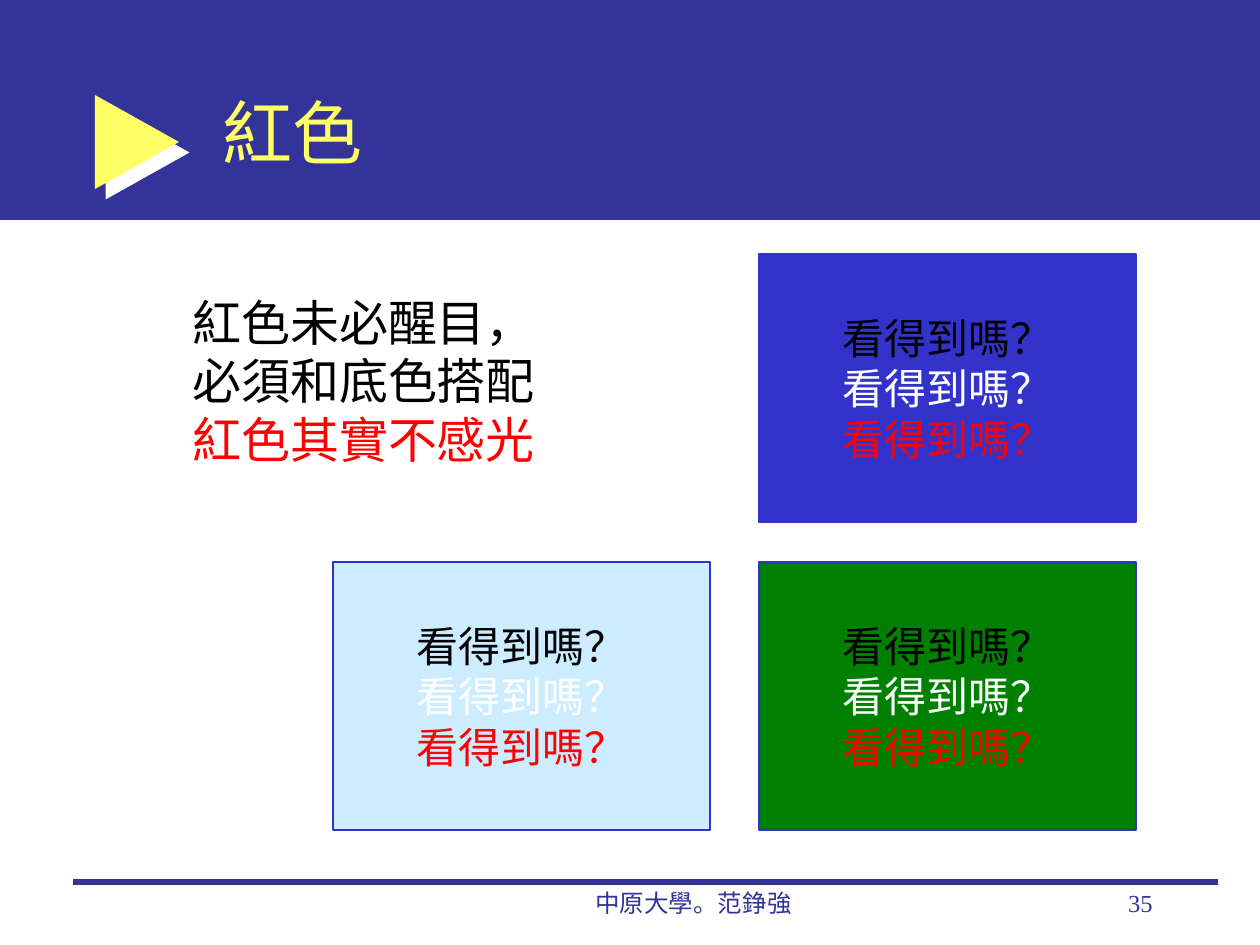
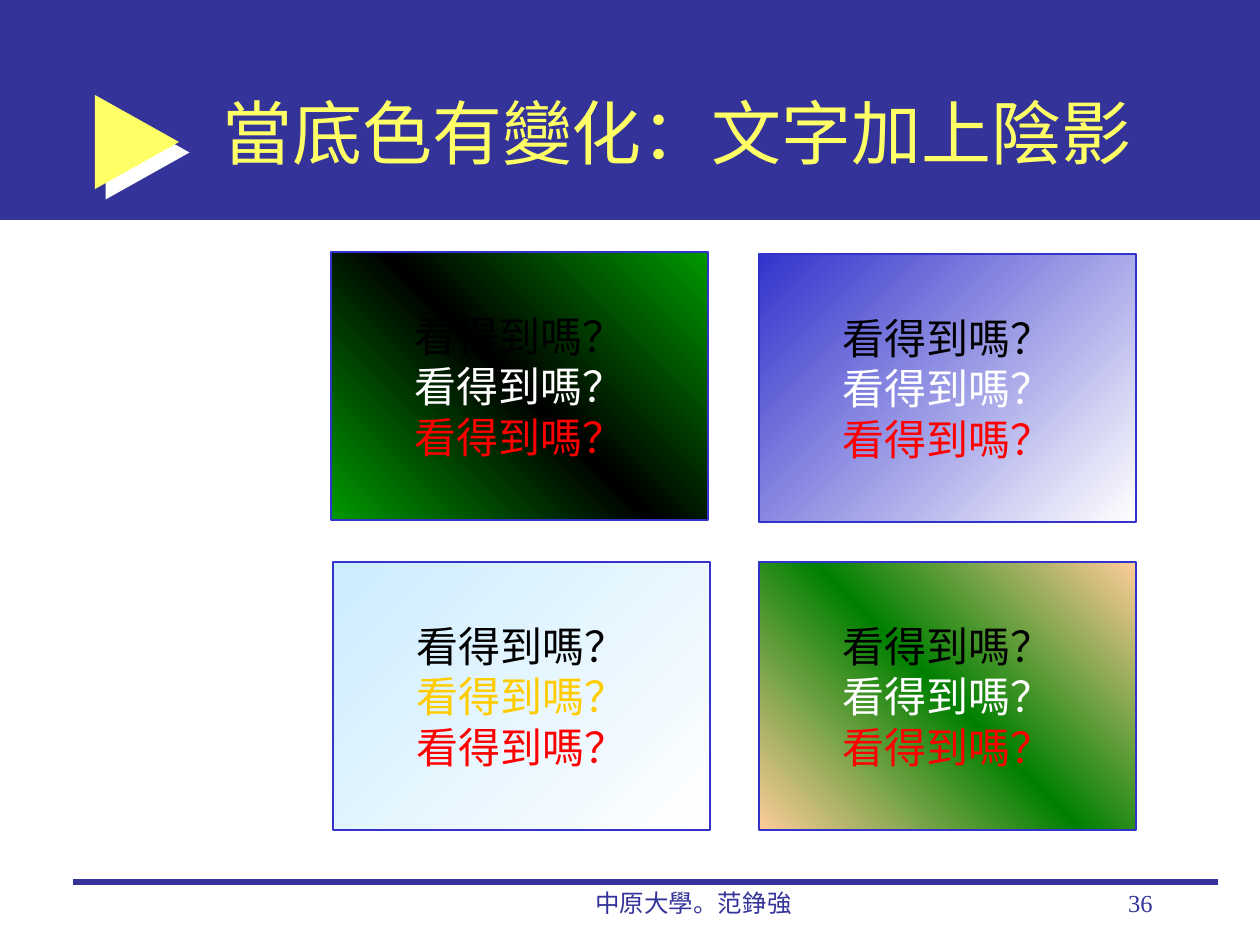
from dataclasses import dataclass
from lxml import etree
from pptx import Presentation
from pptx import util as u
from pptx.dml.color import RGBColor
from pptx.enum import shapes, text
from pptx.oxml.ns import qn

SCALE = 914400 / 126  # EMU in one px


def px(length):
    return u.Emu(round(length * SCALE))


@dataclass(frozen=True)
class Theme:
    navy: str = "333399"
    yellow: str = "FFFF66"
    white: str = "FFFFFF"
    black: str = "000000"
    red: str = "FF0000"
    gold: str = "FFCC00"
    blue: str = "3333CC"
    sky: str = "CCECFF"
    green: str = "008000"
    leaf: str = "009900"
    peach: str = "FFCC99"
    title_font: str = "Arial"
    body_font: str = "Times New Roman"
    title_size: int = 40
    note_size: int = 28
    sample_size: int = 24
    footer_size: int = 14


THEME = Theme()
FOOTER = "中原大學。范錚強"
QUESTION = "看得到嗎？"

# Panel grid
PANEL_W, PANEL_H = 377, 268
COLUMNS, ROWS = (333, 759), (254, 562)


class Painter:
    def __init__(self, deck, theme):
        self.deck, self.theme = deck, theme
        self.page = None

    def new_page(self, title, number):
        theme = self.theme
        self.page = self.deck.slides.add_slide(self.deck.slide_layouts[6])
        # Title band with its arrow
        self.shape(shapes.MSO_SHAPE.RECTANGLE, (0, 0, 1260, 220), theme.navy)
        arrow = self.shape(shapes.MSO_SHAPE.RIGHT_ARROW, (95, 95, 84, 94), theme.yellow)
        arrow.adjustments[0], arrow.adjustments[1] = 0.384, 1
        self.cast_shadow(arrow, theme.white)
        self.label((210, 53, 955, 157), [(title, theme.yellow)], theme.title_size,
                   theme.title_font, vertical_anchor=text.MSO_ANCHOR.MIDDLE)
        # Footer
        self.rule((73, 882), (1218, 882), theme.navy, 3)
        for frame, words, align in (
                ((494, 882, 399, 63), FOOTER, text.PP_ALIGN.CENTER),
                ((903, 882, 262, 63), str(number), text.PP_ALIGN.RIGHT)):
            self.label(frame, [(words, theme.navy)], theme.footer_size, align=align)

    def shape(self, kind, frame, fill, line=None):
        shape = self.page.shapes.add_shape(kind, *map(px, frame))
        shape.shadow.inherit = False
        if isinstance(fill, str):
            shape.fill.solid()
            shape.fill.fore_color.rgb = RGBColor.from_string(fill)
        else:
            self.gradient(shape, *fill)
        if line:
            shape.line.color.rgb = RGBColor.from_string(line)
            shape.line.width = u.Pt(0.75)
        else:
            shape.line.fill.background()
        return shape

    def gradient(self, shape, angle, colours):
        shape.fill.gradient()
        shape.fill.gradient_angle = angle
        stops = shape._element.spPr.find(".//" + qn("a:gsLst"))
        for stop in list(stops):
            stops.remove(stop)
        for i, colour in enumerate(colours):
            position = 100000 * i // (len(colours) - 1)
            stop = etree.SubElement(stops, qn("a:gs"), pos=str(position))
            etree.SubElement(stop, qn("a:srgbClr"), val=colour)

    def cast_shadow(self, shape, colour):
        effects = shape._element.spPr.find(qn("a:effectLst"))
        shadow = etree.SubElement(effects, qn("a:outerShdw"), dist=str(int(u.Pt(8.5))),
                                  dir="2700000", algn="ctr", rotWithShape="0")
        etree.SubElement(shadow, qn("a:srgbClr"), val=colour)

    def rule(self, start, end, colour, width):
        line = self.page.shapes.add_connector(
            shapes.MSO_CONNECTOR.STRAIGHT, *map(px, start + end))
        line.line.color.rgb = RGBColor.from_string(colour)
        line.line.width = u.Pt(width)
        etree.SubElement(line._element.spPr, qn("a:effectLst"))

    def label(self, frame, lines, size, font=None, align=text.PP_ALIGN.LEFT, **format_values):
        box = self.page.shapes.add_textbox(*map(px, frame))
        self.set_text(box, lines, size, font, align, **format_values)

    def set_text(self, box, lines, size, font=None, align=text.PP_ALIGN.LEFT, **format_values):
        frame = box.text_frame
        for name, value in ({"word_wrap": True} | format_values).items():
            setattr(frame, name, value)
        for i, (words, colour) in enumerate(lines):
            para = frame.add_paragraph() if i else frame.paragraphs[0]
            para.alignment = align
            span = para.add_run()
            span.text = words
            for name, value in {"size": u.Pt(size),
                                "name": font or self.theme.body_font}.items():
                setattr(span.font, name, value)
            span.font.color.rgb = RGBColor.from_string(colour)

    def panel(self, column, row, fill, middle=None, nudge=0):
        theme = self.theme
        frame = (COLUMNS[column] - nudge, ROWS[row] - nudge, PANEL_W, PANEL_H)
        box = self.shape(shapes.MSO_SHAPE.RECTANGLE, frame, fill, theme.blue)
        colours = (theme.black, middle or theme.white, theme.red)
        self.set_text(box, [(QUESTION, colour) for colour in colours], theme.sample_size,
                      align=text.PP_ALIGN.CENTER, word_wrap=False,
                      vertical_anchor=text.MSO_ANCHOR.MIDDLE)


def main():
    deck = Presentation()
    deck.slide_width, deck.slide_height = px(1260), px(945)
    painter = Painter(deck, THEME)

    # Red on plain backgrounds
    painter.new_page("紅色", 35)
    painter.panel(1, 0, THEME.blue)
    painter.panel(0, 1, THEME.sky)
    painter.panel(1, 1, THEME.green)
    painter.label((180, 286, 368, 189),
                  [("紅色未必醒目，", THEME.black), ("必須和底色搭配", THEME.black),
                   ("紅色其實不感光", THEME.red)],
                  THEME.note_size, word_wrap=False,
                  auto_size=text.MSO_AUTO_SIZE.SHAPE_TO_FIT_TEXT)

    # Text on gradient backgrounds
    falling, rising = 315, 45
    painter.new_page("當底色有變化：文字加上陰影", 36)
    painter.panel(1, 0, (falling, (THEME.blue, THEME.white)))
    painter.panel(0, 1, (falling, (THEME.sky, THEME.white)), THEME.gold)
    painter.panel(1, 1, (rising, (THEME.peach, THEME.green, THEME.peach)))
    painter.panel(0, 0, (rising, (THEME.leaf, THEME.black, THEME.leaf)), nudge=2)

    deck.save("out.pptx")


if __name__ == "__main__":
    main()
